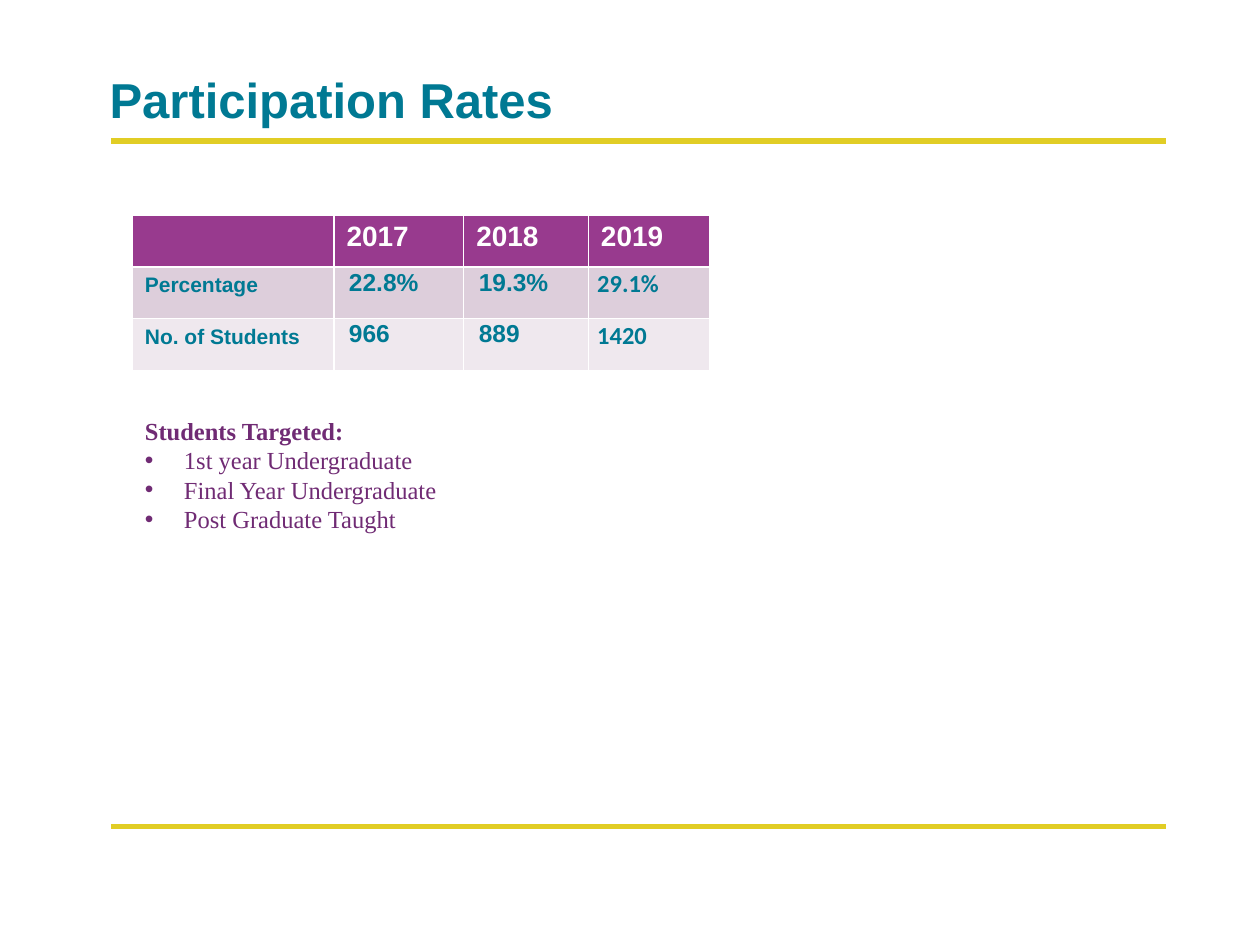
"""Build the Participation Rates slide."""
from dataclasses import dataclass

from lxml import etree
from pptx import Presentation
from pptx.dml.color import RGBColor
from pptx.enum.shapes import MSO_CONNECTOR
from pptx.enum.text import MSO_ANCHOR, MSO_AUTO_SIZE, PP_ALIGN
from pptx.oxml.ns import qn
from pptx.util import Inches, Pt

STRAIGHT = MSO_CONNECTOR.STRAIGHT
BOTTOM = MSO_ANCHOR.BOTTOM
FIT_SHAPE = MSO_AUTO_SIZE.SHAPE_TO_FIT_TEXT
NO_FIT = MSO_AUTO_SIZE.NONE
LEFT = PP_ALIGN.LEFT


@dataclass(frozen=True)
class Theme:
    teal: str = "007993"
    gold: str = "E1CD25"
    plum: str = "702B74"
    header_fill: str = "983A8E"
    white: str = "FFFFFF"
    heading_font: str = "Arial"
    figure_font: str = "Calibri"
    list_font: str = "Times New Roman"
    title_size: int = 28
    header_size: int = 16
    figure_size: int = 14
    label_size: int = 12
    list_size: int = 14


@dataclass(frozen=True)
class Measure:
    label: str
    values: tuple[str, ...]
    fill: str


THEME = Theme()
YEARS = ("2017", "2018", "2019")
MEASURES = (
    Measure("Percentage", ("22.8%", "19.3%", "29.1%"), "DDCEDB"),
    Measure("No. of Students", ("966", "889", "1420"), "EFE8EE"),
)
COLUMN_WIDTHS = (1.6, 1.03, 0.99, 0.96)
ROW_HEIGHT = 0.41
TARGETS = ("1st year Undergraduate", "Final Year Undergraduate", "Post Graduate Taught")
RULE_TOPS = (1.12, 6.56)
BULLET_INDENT = 0.31


def style(paragraph, font: str, size: int, color: str, bold: bool = True) -> None:
    """Set the font of a whole paragraph."""
    paragraph.font.name = font
    paragraph.font.size = Pt(size)
    paragraph.font.bold = bold
    paragraph.font.color.rgb = RGBColor.from_string(color)


def place(shape, left: float, top: float, width: float, height: float) -> None:
    """Move and size a placeholder."""
    shape.left, shape.top = Inches(left), Inches(top)
    shape.width, shape.height = Inches(width), Inches(height)


def add_title(slide) -> None:
    """Fill the title placeholder."""
    title = slide.shapes.title
    place(title, 0.87, 0.3, 6.64, 0.77)
    frame = title.text_frame
    frame.text = "Participation Rates"
    frame.margin_left = 0
    frame.vertical_anchor = BOTTOM
    frame.auto_size = NO_FIT
    frame.paragraphs[0].alignment = LEFT
    style(frame.paragraphs[0], THEME.heading_font, THEME.title_size, THEME.teal)


def add_rule(slide, top: float) -> None:
    """Draw a gold horizontal rule."""
    rule = slide.shapes.add_connector(
        STRAIGHT, Inches(0.88), Inches(top), Inches(9.25), Inches(top))
    rule.line.color.rgb = RGBColor.from_string(THEME.gold)
    rule.line.width = Pt(3)
    etree.SubElement(rule._element.spPr, qn("a:effectLst"))


def set_bullet(paragraph, bullet: str, indent: float) -> None:
    """Give a paragraph a hanging bullet, or none for an empty one."""
    properties = paragraph._p.get_or_add_pPr()
    properties.set("marL", str(Inches(indent)))
    properties.set("indent", str(-Inches(indent)))
    if bullet:
        font = etree.SubElement(properties, qn("a:buFont"))
        font.set("typeface", THEME.heading_font)
        etree.SubElement(properties, qn("a:buChar")).set("char", bullet)
    else:
        etree.SubElement(properties, qn("a:buNone"))


def add_targets(slide) -> None:
    """Fill the body placeholder with the targeted groups."""
    body = slide.placeholders[1]
    place(body, 1.05, 3.25, 3.09, 1.04)
    frame = body.text_frame
    frame.text = "\n".join(("Students Targeted:", *TARGETS))
    frame.auto_size = FIT_SHAPE
    for index, paragraph in enumerate(frame.paragraphs):
        is_heading = index == 0
        paragraph.space_before = Pt(0)
        set_bullet(paragraph, "" if is_heading else "•", 0 if is_heading else BULLET_INDENT)
        style(paragraph, THEME.list_font, THEME.list_size, THEME.plum, is_heading)


def fill_cell(cell, text: str, fill: str, font: str, size: int, color: str) -> None:
    """Write and colour one table cell."""
    cell.fill.solid()
    cell.fill.fore_color.rgb = RGBColor.from_string(fill)
    if text:
        cell.text = text
        style(cell.text_frame.paragraphs[0], font, size, color)


def add_rates(slide) -> None:
    """Add the table of participation by year."""
    row_count = len(MEASURES) + 1
    rates = slide.shapes.add_table(
        row_count, len(COLUMN_WIDTHS), Inches(1.05), Inches(1.71),
        Inches(sum(COLUMN_WIDTHS)), Inches(ROW_HEIGHT * row_count)).table
    for column, width in zip(rates.columns, COLUMN_WIDTHS):
        column.width = Inches(width)
    for row in rates.rows:
        row.height = Inches(ROW_HEIGHT)
    for column, year in enumerate(("", *YEARS)):
        fill_cell(rates.cell(0, column), year, THEME.header_fill,
                  THEME.heading_font, THEME.header_size, THEME.white)
    for row, measure in enumerate(MEASURES, 1):
        fill_cell(rates.cell(row, 0), measure.label, measure.fill,
                  THEME.heading_font, THEME.label_size, THEME.teal)
        for column, value in enumerate(measure.values, 1):
            is_latest = column == len(YEARS)
            cell = rates.cell(row, column)
            fill_cell(cell, value, measure.fill,
                      THEME.figure_font if is_latest else THEME.heading_font,
                      THEME.figure_size, THEME.teal)
            cell.margin_left = Inches(0.07 if is_latest else 0.12)
            cell.margin_right = Inches(0.07)
            cell.margin_top = cell.margin_bottom = 0
            cell.text_frame.paragraphs[0].line_spacing = 1.07


def main() -> None:
    """Build and save the slide."""
    deck = Presentation()
    deck.slide_width, deck.slide_height = Inches(10), Inches(7.5)
    slide = deck.slides.add_slide(deck.slide_layouts[1])
    add_title(slide)
    for top in RULE_TOPS:
        add_rule(slide, top)
    add_targets(slide)
    add_rates(slide)
    deck.save("out.pptx")


if __name__ == "__main__":
    main()
